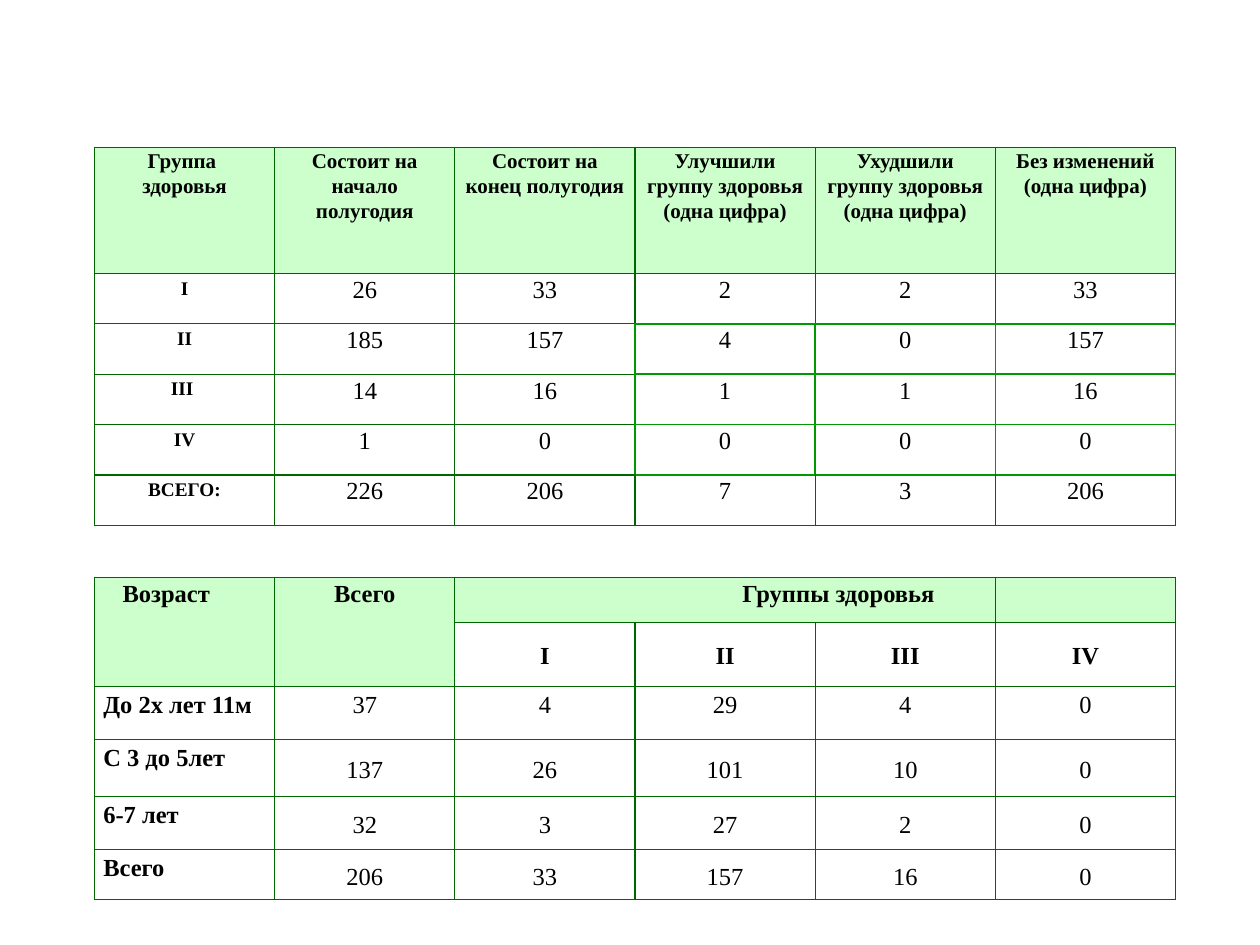
from dataclasses import dataclass

from lxml.etree import SubElement
from pptx import Presentation
from pptx.dml.color import RGBColor
from pptx.enum.text import MSO_ANCHOR as ANCHOR, PP_ALIGN as ALIGN
from pptx.oxml.ns import qn
from pptx.util import Inches, Pt

FONT = "Times New Roman"
DARK, BRIGHT, PALE, BLACK = "006600", "009900", "CCFFCC", "000000"
LEFT, COL_WIDTH, COLS = 0.75, 1.43, 6
NEIGHBOURS = {"L": (0, -1), "R": (0, 1), "T": (-1, 0), "B": (1, 0)}


@dataclass
class Style:
    size: float = 14
    bold: bool = False
    spacing: float = 1.07
    align: ALIGN = ALIGN.CENTER
    anchor: ANCHOR = ANCHOR.TOP
    fill: str = ""
    space_after: float = 0
    left: float = 0.07
    right: float = 0.07


def rgb(value: str) -> RGBColor:
    return RGBColor.from_string(value)


def set_border(cell, index: int, side: str, color: str, width: float) -> None:
    tc_pr = cell._tc.get_or_add_tcPr()
    ln = SubElement(tc_pr, qn(f"a:ln{side}"), w=str(Pt(width)))
    SubElement(SubElement(ln, qn("a:solidFill")), qn("a:srgbClr"), val=color)
    tc_pr.insert(index, ln)


def set_cell(cell, text: str, style: Style) -> None:
    cell.margin_left, cell.margin_right = Inches(style.left), Inches(style.right)
    cell.margin_top, cell.margin_bottom = Inches(0.01), 0
    cell.vertical_anchor = style.anchor
    if style.fill:
        cell.fill.solid()
        cell.fill.fore_color.rgb = rgb(style.fill)
    else:
        cell.fill.background()
    if not text:
        return
    cell.text_frame.text = text
    for p in cell.text_frame.paragraphs:
        p.alignment = style.align
        p.line_spacing = style.spacing
        if style.space_after:
            p.space_after = Pt(style.space_after)
        for r in p.runs:
            r.font.name = FONT
            r.font.size = Pt(style.size)
            r.font.bold = style.bold
            r.font.color.rgb = rgb(BLACK)


def add_grid(slide, top: float, heights: list[float], rows: list[list[str]],
             styles: list[list[Style]], accents: set[tuple[int, int]]):
    table = slide.shapes.add_table(
        len(heights), COLS, Inches(LEFT), Inches(top),
        Inches(COL_WIDTH * COLS), Inches(sum(heights))).table
    table.first_row = table.horz_banding = False
    for col in table.columns:
        col.width = Inches(COL_WIDTH)
    for i, height in enumerate(heights):
        table.rows[i].height = Inches(height)
        for j in range(COLS):
            cell = table.cell(i, j)
            set_cell(cell, rows[i][j], styles[i][j])
            for k, (side, (di, dj)) in enumerate(NEIGHBOURS.items()):
                bright = accents & {(i, j), (i + di, j + dj)}
                set_border(cell, k, side, *((BRIGHT, 1) if bright else (DARK, 0.75)))
    return table


def add_health_table(slide) -> None:
    rows = [
        ["Группа \nздоровья", "Состоит на начало полугодия", "Состоит на конец полугодия",
         "Улучшили группу здоровья\n(одна цифра)", "Ухудшили группу здоровья\n(одна цифра)",
         "Без изменений\n(одна цифра)"],
        ["I", "26", "33", "2", "2", "33"],
        ["II", "185", "157", "4", "0", "157"],
        ["III ", "14", "16", "1", "1", "16"],
        ["IV", "1", "0", "0", "0", "0"],
        ["ВСЕГО:", "226", "206", "7", "3", "206"],
    ]
    header = Style(12, True, fill=PALE)
    body = [Style(11, True, 1.15)] + [Style()] * 5
    accents = {(i, j) for i in range(2, 5) for j in range(3, 6)}
    add_grid(slide, 1.17, [1.0] + [0.4] * 5, rows, [[header] * COLS] + [body] * 5, accents)


def add_age_table(slide) -> None:
    rows = [
        ["Возраст", "Всего", "Группы здоровья", "", "", ""],
        ["", "", "I", "II", "III", "IV"],
        ["До 2х лет 11м", "37", "4", "29", "4", "0"],
        ["С 3 до 5лет", "137", "26", "101", "10", "0"],
        ["6-7 лет", "32", "3", "27", "2", "0"],
        ["Всего", "206", "33", "157", "16", "0"],
    ]
    header = Style(bold=True, fill=PALE)
    age = Style(bold=True, fill=PALE, right=0.36)
    groups = Style(bold=True, fill=PALE, left=1.87)
    group = Style(bold=True, anchor=ANCHOR.MIDDLE)
    label = Style(bold=True, spacing=1.15, align=ALIGN.LEFT)
    first = Style(spacing=1.15, space_after=10)
    value = Style(spacing=1.15, anchor=ANCHOR.MIDDLE)
    styles = [
        [age, header, groups] + [header] * 3,
        [header] * 2 + [group] * 4,
        [label] + [first] * 5,
    ] + [[label] + [value] * 5] * 3
    table = add_grid(slide, 4.58, [0.36, 0.51, 0.42, 0.45, 0.42, 0.4], rows, styles, set())
    for start, end in (((0, 0), (1, 0)), ((0, 1), (1, 1)), ((0, 2), (0, 4))):
        table.cell(*start).merge(table.cell(*end))


def main() -> None:
    prs = Presentation()
    prs.slide_width, prs.slide_height = Inches(10), Inches(7.5)
    slide = prs.slides.add_slide(prs.slide_layouts[6])
    add_health_table(slide)
    add_age_table(slide)
    prs.save("out.pptx")


if __name__ == "__main__":
    main()
